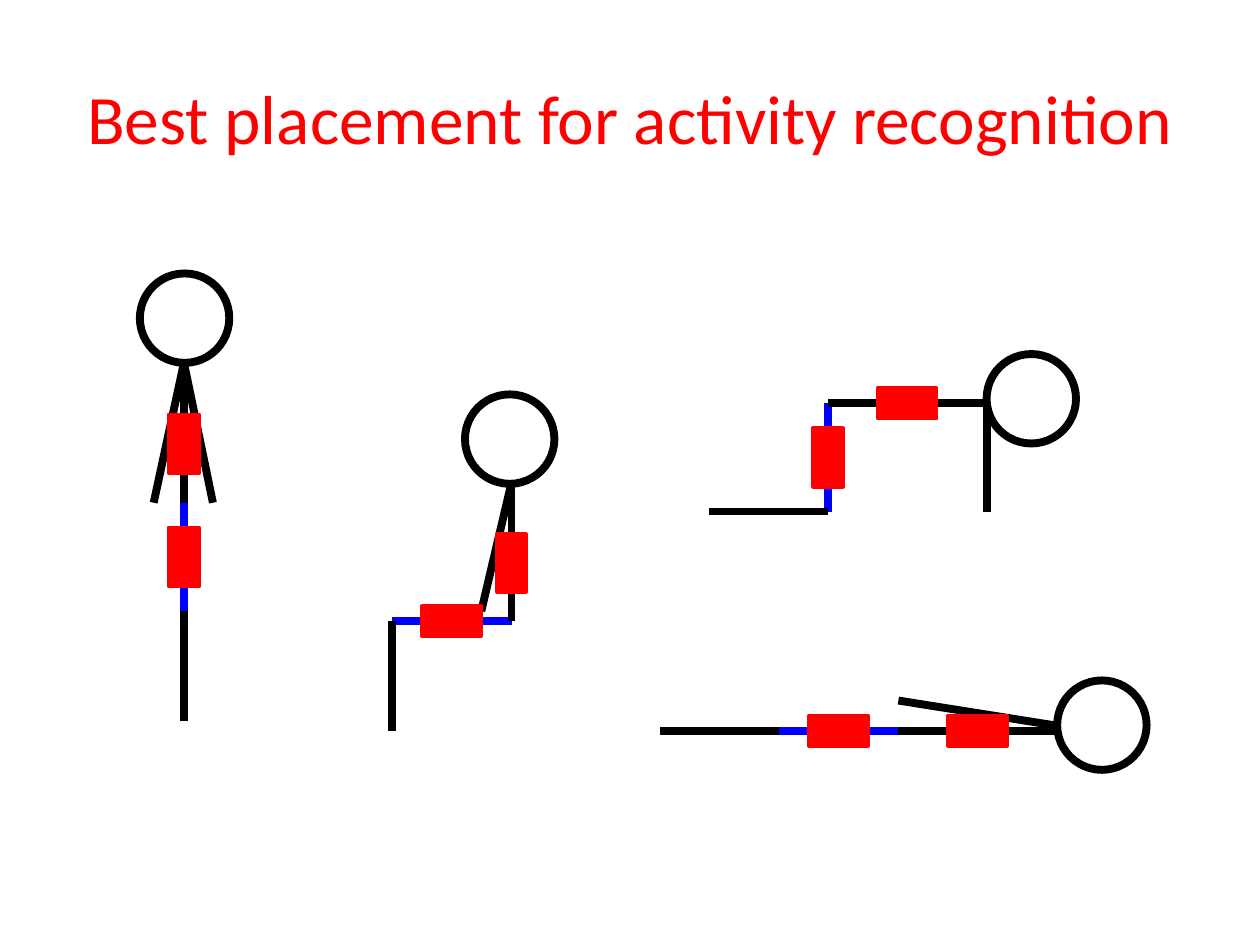
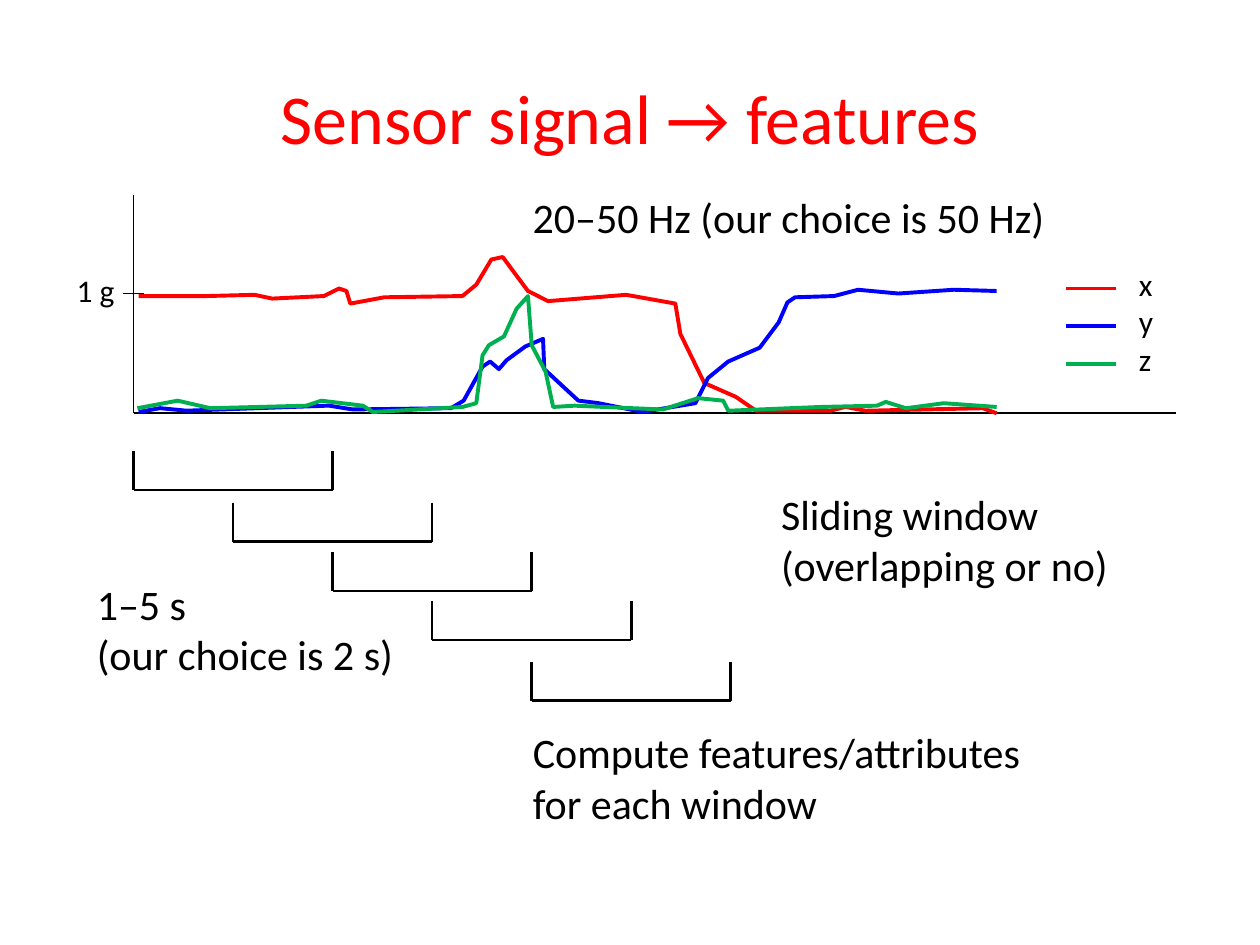
from pptx import Presentation
from pptx.dml.color import RGBColor
from pptx.enum.shapes import MSO_CONNECTOR, MSO_SHAPE
from pptx.enum.text import MSO_ANCHOR, MSO_AUTO_SIZE, PP_ALIGN
from pptx.util import Inches, Pt
from lxml import etree

COLORS = {"red": "FF0000", "blue": "0000FF", "green": "00B050", "black": "000000"}
FONT = "Calibri"
DRAWING = "http://schemas.openxmlformats.org/drawingml/2006/main"


def add_line(slide, start, end, color, width):
    connector = slide.shapes.add_connector(
        MSO_CONNECTOR.STRAIGHT, *(Inches(value) for value in start + end))
    connector.line.color.rgb = RGBColor.from_string(COLORS[color])
    connector.line.width = Pt(width)
    etree.SubElement(connector._element.spPr, f"{{{DRAWING}}}effectLst")


def add_text(slide, box, text, size, wrap):
    shape = slide.shapes.add_textbox(*(Inches(value) for value in box))
    frame = shape.text_frame
    frame.text = text
    frame.word_wrap = wrap
    frame.auto_size = MSO_AUTO_SIZE.SHAPE_TO_FIT_TEXT
    for paragraph in frame.paragraphs:
        for run in paragraph.runs:
            for name, value in {"name": FONT, "size": Pt(size)}.items():
                setattr(run.font, name, value)
            run.font.color.rgb = RGBColor.from_string(COLORS["black"])


presentation = Presentation()
presentation.slide_width = Inches(10)
presentation.slide_height = Inches(7.5)

# Titles
slides = []
for text, size in [("Best placement for activity recognition", 39.6),
                   ("Sensor signal → features", 40)]:
    slide = presentation.slides.add_slide(presentation.slide_layouts[5])
    title = slide.shapes.title
    place = {"left": 0.5, "top": 0.3, "width": 9, "height": 1.25}
    for name, value in place.items():
        setattr(title, name, Inches(value))
    frame = title.text_frame
    frame.text = text
    frame.auto_size = MSO_AUTO_SIZE.NONE
    frame.vertical_anchor = MSO_ANCHOR.MIDDLE
    paragraph = frame.paragraphs[0]
    paragraph.alignment = PP_ALIGN.CENTER
    for name, value in {"name": FONT, "size": Pt(size)}.items():
        setattr(paragraph.runs[0].font, name, value)
    paragraph.runs[0].font.color.rgb = RGBColor.from_string(COLORS["red"])
    slides.append(slide)
placement_slide, signal_slide = slides

# Stick figures: foot, knee, hip, neck, shoulder, hands, head corner
HEAD_SIZE = 0.71
SENSOR_LONG, SENSOR_SHORT = 0.47, 0.24
figures = [
    ((1.46, 5.72), (1.46, 4.85), (1.46, 3.99), (1.46, 2.88), (1.46, 2.88),
     [(1.22, 3.99), (1.69, 3.99)], (1.11, 2.17)),
    ((3.11, 5.8), (3.11, 4.93), (4.06, 4.93), (4.06, 3.83), (4.06, 3.83),
     [(3.82, 4.85)], (3.69, 3.13)),
    ((5.24, 5.8), (6.18, 5.8), (7.13, 5.8), (8.39, 5.8), (8.39, 5.76),
     [(7.13, 5.56)], (8.39, 5.4)),
    ((5.63, 4.06), (6.57, 4.06), (6.57, 3.2), (7.83, 3.2), (7.83, 3.2),
     [(7.83, 4.06)], (7.83, 2.81)),
]
for foot, knee, hip, neck, shoulder, hands, head_corner in figures:
    add_line(placement_slide, knee, hip, "blue", 4.5)
    add_line(placement_slide, foot, knee, "black", 4.5)
    add_line(placement_slide, hip, neck, "black", 4.5)
    for hand in hands:
        add_line(placement_slide, hand, shoulder, "black", 4.5)
    head = placement_slide.shapes.add_shape(
        MSO_SHAPE.OVAL, *(Inches(value) for value in head_corner + (HEAD_SIZE, HEAD_SIZE)))
    head.shadow.inherit = False
    head.fill.background()
    head.line.color.rgb = RGBColor.from_string(COLORS["black"])
    head.line.width = Pt(4.5)

    # Sensors on thigh and torso, lower on an upright torso
    torso_share = 0.42 if hip[0] == neck[0] else 0.5
    for start, end, share in [(knee, hip, 0.5), (hip, neck, torso_share)]:
        center_x, center_y = (a + (b - a) * share for a, b in zip(start, end))
        width, height = SENSOR_LONG, SENSOR_SHORT
        if start[0] == end[0]:
            width, height = height, width
        sensor = placement_slide.shapes.add_shape(
            MSO_SHAPE.RECTANGLE, Inches(center_x - width / 2),
            Inches(center_y - height / 2), Inches(width), Inches(height))
        sensor.shadow.inherit = False
        sensor.fill.solid()
        sensor.fill.fore_color.rgb = RGBColor.from_string(COLORS["red"])
        sensor.line.color.rgb = RGBColor.from_string(COLORS["red"])
        sensor.line.width = Pt(2)

# Signal axes
for start, end in [((1.06, 1.55), (1.06, 3.28)), ((1.06, 3.28), (9.33, 3.28)),
                   ((0.98, 2.33), (1.14, 2.33))]:
    add_line(signal_slide, start, end, "black", 1)
add_text(signal_slide, (0.51, 2.1, 0.55, 0.4), "1 g", 18, True)

# Signals, in hundredths of an inch
signals = {
    "red": [
        (110, 235), (164, 235), (202, 234), (216, 237), (257, 235), (269, 229),
        (275, 231), (278, 241), (305, 236), (367, 235), (378, 226), (390, 206),
        (399, 204), (419, 231), (435, 239), (497, 234), (536, 241), (540, 265),
        (559, 304), (584, 315), (600, 326), (659, 326), (671, 323), (687, 326),
        (780, 324), (791, 328)],
    "blue": [
        (110, 327), (127, 324), (148, 326), (261, 322), (280, 325), (358, 324),
        (368, 318), (383, 291), (389, 287), (396, 293), (402, 286), (417, 275),
        (431, 269), (432, 293), (446, 306), (459, 318), (475, 320), (510, 327),
        (552, 320), (562, 300), (578, 287), (603, 276), (618, 256), (625, 240),
        (631, 236), (662, 235), (681, 230), (713, 233), (757, 230), (791, 231)],
    "green": [
        (109, 324), (141, 318), (167, 324), (243, 322), (255, 318), (288, 322),
        (296, 327), (367, 323), (378, 320), (383, 282), (388, 274), (400, 267),
        (410, 245), (419, 235), (422, 274), (433, 295), (439, 323), (456, 322),
        (526, 325), (554, 316), (574, 318), (578, 326), (651, 323), (696, 322),
        (703, 319), (719, 324), (749, 320), (791, 323)],
}
for color, points in signals.items():
    builder = signal_slide.shapes.build_freeform(*points[0], scale=Inches(0.01))
    builder.add_line_segments(points[1:], close=False)
    signal = builder.convert_to_shape()
    signal.shadow.inherit = False
    signal.fill.background()
    signal.line.color.rgb = RGBColor.from_string(COLORS[color])
    signal.line.width = Pt(2.25)

# Legend
add_text(signal_slide, (8.94, 2.05, 0.39, 1.01), "x\ny\nz", 18, True)
for row, color in enumerate(signals):
    y = 2.29 + 0.3 * row
    add_line(signal_slide, (8.46, y), (8.86, y), color, 2.25)

# Sliding windows, each starting halfway along the one before
WINDOW_WIDTH, WINDOW_HEIGHT = 1.58, 0.31
for index, top in enumerate([3.58, 3.99, 4.38, 4.77, 5.25]):
    left = 1.06 + index * WINDOW_WIDTH / 2
    right, bottom = left + WINDOW_WIDTH, top + WINDOW_HEIGHT
    for start, end in [((left, top), (left, bottom)), ((right, bottom), (left, bottom)),
                       ((right, top), (right, bottom))]:
        add_line(signal_slide, start, end, "black", 1.5)

# Notes beside the windows
for box, text in [
    ((4.13, 5.72, 4.11, 0.91), "Compute features/attributes\vfor each window"),
    ((6.1, 3.83, 2.82, 0.91), "Sliding window\n(overlapping or no)"),
    ((4.13, 1.47, 4.3, 0.5), "20–50 Hz (our choice is 50 Hz)"),
    ((0.67, 4.54, 2.57, 0.91), "1–5 s\n(our choice is 2 s)"),
]:
    add_text(signal_slide, box, text, 24, False)

presentation.save("out.pptx")
